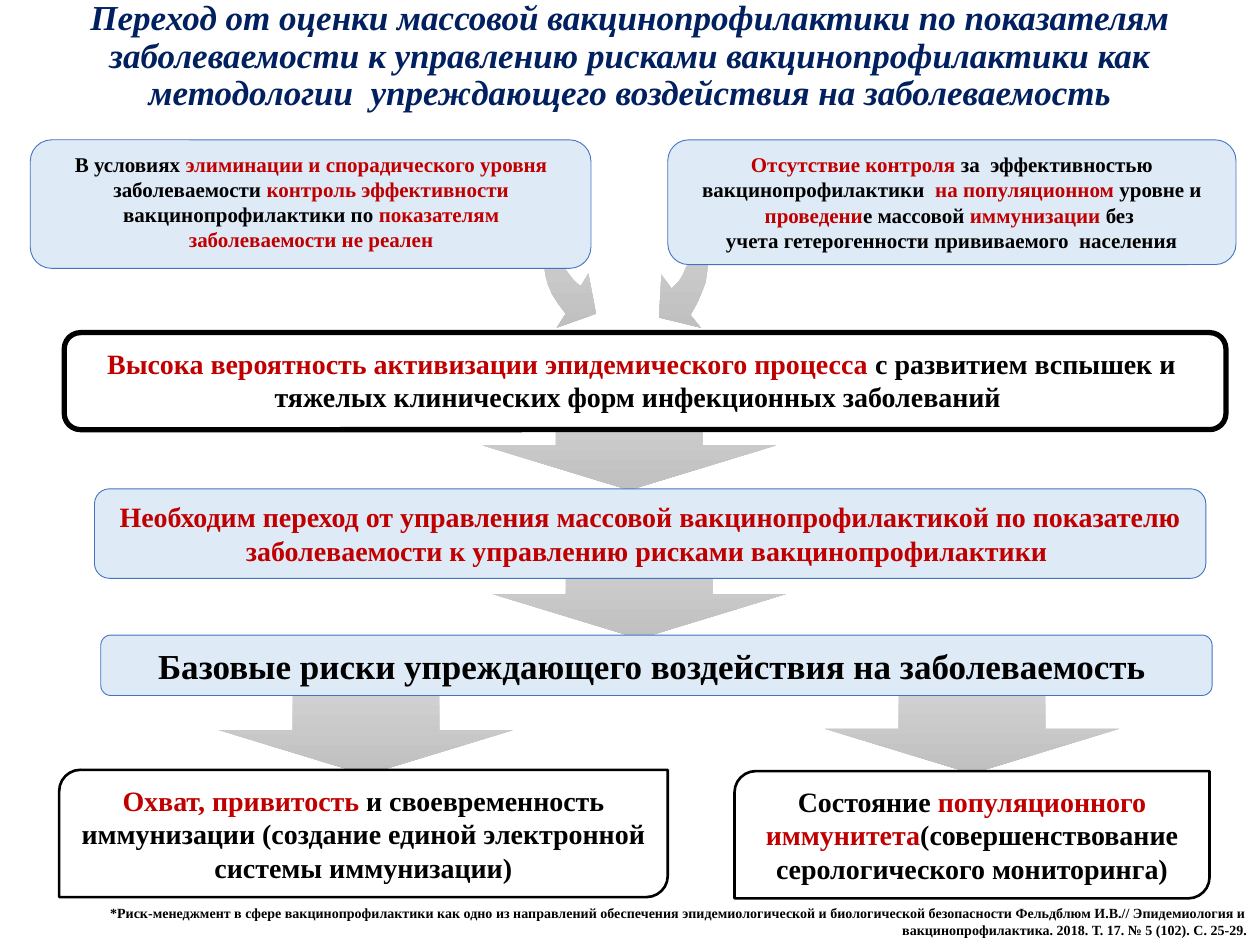
from pptx import Presentation
from pptx import util as u
from pptx.dml.color import RGBColor
from pptx.enum import shapes, text

PX = 9144  # one px is 1/100 inch
FONT = "Times New Roman"
HUES = {"red": "C00000", "black": "000000", "navy": "002060", "white": "FFFFFF",
        "pale": "DEEBF7", "blue": "4472C4", "light": "D2D2D2", "dark": "C0C0C0"}
KINDS = shapes.MSO_SHAPE
ALIGN = text.PP_ALIGN
MID, TOP = text.MSO_ANCHOR.MIDDLE, text.MSO_ANCHOR.TOP

# Content: each paragraph is a list of (colour, words)
TITLE = [[("navy", "Переход от оценки массовой вакцинопрофилактики по показателям "
           "заболеваемости к управлению рисками вакцинопрофилактики как "
           "методологии  упреждающего воздействия на заболеваемость")]]
CONTROL = [[("black", "В условиях "), ("red", "элиминации и спорадического уровня "),
            ("black", "заболеваемости "), ("red", "контроль эффективности "),
            ("black", "вакцинопрофилактики по "),
            ("red", "показателям заболеваемости не реален")]]
ABSENCE = [[("red", "Отсутствие контроля "),
            ("black", "за  эффективностью вакцинопрофилактики  "),
            ("red", "на популяционном "), ("black", "уровне и "),
            ("red", "проведени"), ("black", "е массовой "),
            ("red", "иммунизации"), ("black", " без ")],
           [("black", "учета гетерогенности прививаемого  населения")]]
THREAT = [[("red", "Высока вероятность активизации эпидемического процесса "),
           ("black", "с развитием вспышек и тяжелых клинических форм "
            "инфекционных заболеваний ")]]
SHIFT = [[("red", "Необходим переход от управления массовой вакцинопрофилактикой "
           "по показателю заболеваемости к управлению рисками вакцинопрофилактики ")]]
RISKS = [[("black", "Базовые риски упреждающего воздействия на заболеваемость ")]]
COVER = [[("red", "Охват, привитость "),
          ("black", "и своевременность иммунизации (создание единой электронной "
           "системы иммунизации)")]]
IMMUNE = [[("black", "Состояние "), ("red", "популяционного иммунитета"),
           ("black", "(совершенствование серологического мониторинга)")]]
SOURCE = [[("black", "*Риск-менеджмент в сфере вакцинопрофилактики как одно из "
            "направлений обеспечения эпидемиологической и биологической безопасности "
            "Фельдблюм И.В.// Эпидемиология и вакцинопрофилактика. 2018. Т. 17. "
            "№ 5 (102). С. 25-29.")]]

# Arrows: left and top of the straight ones, outlines of the bent ones
ARROWS = [(174, 544), (655, 543), (391, 436), (383, 318)]
BENDS = [
    [(441, 178), (437, 185), (434, 192), (432, 198), (431, 205), (432, 212),
     (433, 219), (435, 226), (438, 233), (443, 241), (449, 249), (442, 260),
     (473, 249), (467, 217), (461, 227), (458, 225), (455, 222), (452, 218),
     (449, 214), (446, 209), (444, 205), (442, 199), (440, 194), (439, 190),
     (439, 181)],
    [(549, 175), (553, 182), (557, 189), (560, 195), (561, 202), (562, 210),
     (561, 217), (560, 224), (557, 232), (553, 241), (548, 250), (556, 260),
     (523, 252), (525, 218), (533, 229), (536, 226), (539, 223), (542, 218),
     (544, 213), (547, 208), (548, 203), (550, 198), (551, 192), (551, 182),
     (550, 178)],
]

# Looks: preset, fill, line, line width in points
SOFT = (KINDS.ROUNDED_RECTANGLE, "pale", "blue", 0.5)
BOLD = (KINDS.ROUNDED_RECTANGLE, "white", "black", 3)
LEAF = (KINDS.ROUND_2_DIAG_RECTANGLE, "white", "black", 1.5)

# Parts from back to front: look (None is a text box), place, words, format
PARTS = [
    (SOFT, (24, 111, 445, 102), None, {}),
    (None, (32, 115, 430, 91), CONTROL, {"size": 12}),
    (BOLD, (51, 264, 922, 77), None, {}),
    (None, (60, 270, 898, 64), THREAT, {"size": 16}),
    (SOFT, (75, 388, 882, 71), SHIFT, {"size": 16}),
    (SOFT, (530, 111, 451, 99), ABSENCE, {"size": 12}),
    (None, (15, 713, 985, 37), SOURCE, {"size": 8, "align": ALIGN.RIGHT}),
    (LEAF, (47, 611, 483, 101), COVER, {"size": 16}),
    (LEAF, (583, 612, 377, 101), IMMUNE, {"size": 16}),
    (None, (0, 14, 1000, 92), TITLE,
     {"size": 20, "italic": True, "space": 0.9, "anchor": MID, "foot": 35}),
    (SOFT, (80, 504, 882, 48), RISKS, {"size": 20}),
]


def hue(name):
    return RGBColor.from_string(HUES[name])


def shade(shape):
    """Grey top-to-bottom gradient without outline."""
    shape.shadow.inherit = False
    shape.line.fill.background()
    shape.fill.gradient()
    shape.fill.gradient_angle = 270
    for stop, name in zip(shape.fill.gradient_stops, ("light", "dark")):
        stop.color.rgb = hue(name)


def write(shape, paras, form):
    frame = shape.text_frame
    look = {"word_wrap": True, "vertical_anchor": form.get("anchor", TOP),
            "margin_bottom": form.get("foot", 5) * PX}
    for key, val in look.items():
        setattr(frame, key, val)
    face = {"name": FONT, "size": u.Pt(form["size"]), "bold": True,
            "italic": form.get("italic")}
    for i, runs in enumerate(paras):
        para = frame.paragraphs[0] if i == 0 else frame.add_paragraph()
        para.alignment = form.get("align", ALIGN.CENTER)
        para.line_spacing = form.get("space")
        for name, words in runs:
            run = para.add_run()
            run.text = words
            for key, val in face.items():
                setattr(run.font, key, val)
            run.font.color.rgb = hue(name)


def place(slide, look, box, paras, form):
    spot = [n * PX for n in box]
    if look is None:
        shape = slide.shapes.add_textbox(*spot)
    else:
        kind, fill, line, width = look
        shape = slide.shapes.add_shape(kind, *spot)
        shape.shadow.inherit = False
        shape.fill.solid()
        shape.fill.fore_color.rgb = hue(fill)
        shape.line.color.rgb = hue(line)
        shape.line.width = u.Pt(width)
        form = {"anchor": MID, **form}
    if paras:
        write(shape, paras, form)


def main():
    deck = Presentation()
    deck.slide_width, deck.slide_height = 1000 * PX, 750 * PX
    slide = deck.slides.add_slide(deck.slide_layouts[6])

    # Arrows go behind the boxes
    for left, top in ARROWS:
        shade(slide.shapes.add_shape(KINDS.DOWN_ARROW, left * PX, top * PX,
                                     233 * PX, 71 * PX))
    for dots in BENDS:
        pen = slide.shapes.build_freeform(*dots[0], scale=PX)
        pen.add_line_segments(dots[1:], close=True)
        shade(pen.convert_to_shape())

    # Boxes and text
    for part in PARTS:
        place(slide, *part)
    deck.save("out.pptx")


if __name__ == "__main__":
    main()
